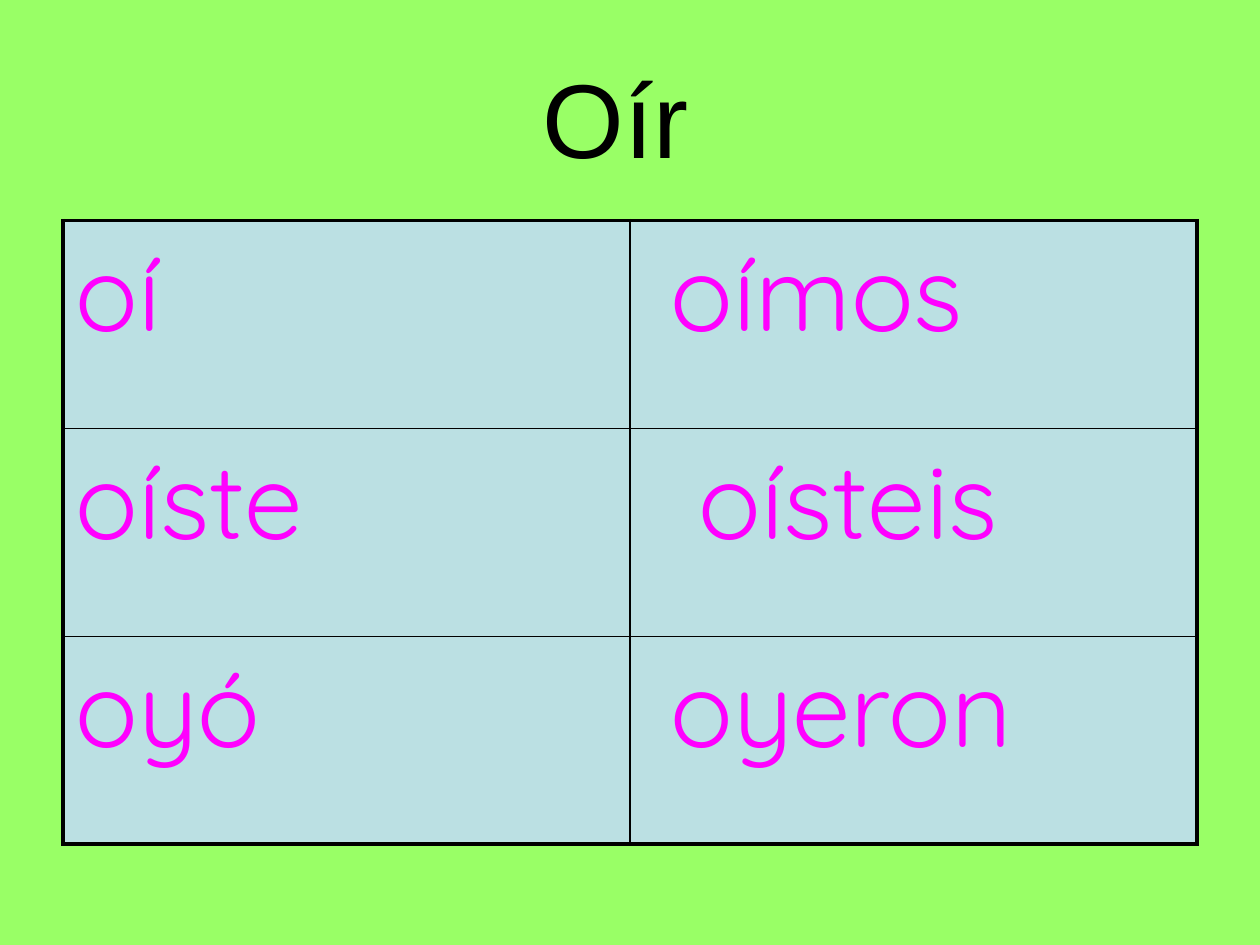
from lxml.etree import SubElement
from pptx import Presentation
from pptx.dml.color import RGBColor as Rgb
from pptx.enum.text import MSO_ANCHOR as Anchor, PP_ALIGN as Align
from pptx.oxml.ns import qn
from pptx.util import Pt

TITLE = "Oír"
# Each entry is a verb form and its indent in steps.
FORMS = [
    [("oí", 0), ("oímos", 1)],
    [("oíste", 0), ("oísteis", 2)],
    [("oyó", 0), ("oyeron", 1)],
]

THEME = {
    "background": "99FF66",
    "cell": "BBE0E3",
    "border": "000000",
    "title": {"name": "Arial", "size": Pt(60), "color": "000000"},
    "form": {"name": "Quicksand", "size": Pt(60), "color": "FF00FF"},
}
SLIDE_SIZE = (720, 540)
TITLE_BOX = (36, 21.6, 648, 90)
TABLE_BOX = (36, 126, 648, 356.4)
INSET, INDENT = 7.2, 16
OUTER, INNER = 2.25, 1


def write(para, text, style):
    span = para.add_run()
    span.text = text
    for name, value in style.items():
        if name == "color":
            span.font.color.rgb = Rgb.from_string(value)
        else:
            setattr(span.font, name, value)


def add_borders(cell, widths):
    """Border lines must come before the fill, so call this first."""
    properties = cell._tc.get_or_add_tcPr()
    for side, width in widths.items():
        line = SubElement(properties, qn(f"a:ln{side}"), w=str(Pt(width)))
        fill = SubElement(line, qn("a:solidFill"))
        SubElement(fill, qn("a:srgbClr"), val=THEME["border"])


def add_title(page):
    box = page.shapes.add_textbox(*map(Pt, TITLE_BOX))
    frame = box.text_frame
    layout = {"word_wrap": True, "vertical_anchor": Anchor.MIDDLE,
              "margin_right": Pt(INSET + INDENT)}
    for name, value in layout.items():
        setattr(frame, name, value)
    para = frame.paragraphs[0]
    para.alignment = Align.CENTER
    write(para, TITLE, THEME["title"])


def add_forms(page):
    rows, columns = len(FORMS), len(FORMS[0])
    table = page.shapes.add_table(rows, columns, *map(Pt, TABLE_BOX)).table
    table.first_row = table.horz_banding = False
    for r, forms in enumerate(FORMS):
        for c, (text, steps) in enumerate(forms):
            cell = table.cell(r, c)
            edges = {"L": c == 0, "R": c == columns - 1,
                     "T": r == 0, "B": r == rows - 1}
            add_borders(cell, {side: OUTER if outer else INNER
                               for side, outer in edges.items()})
            cell.fill.solid()
            cell.fill.fore_color.rgb = Rgb.from_string(THEME["cell"])
            cell.margin_left = Pt(INSET + steps * INDENT)
            write(cell.text_frame.paragraphs[0], text, THEME["form"])


def main():
    deck = Presentation()
    deck.slide_width, deck.slide_height = map(Pt, SLIDE_SIZE)
    page = deck.slides.add_slide(deck.slide_layouts[6])
    page.background.fill.solid()
    page.background.fill.fore_color.rgb = Rgb.from_string(THEME["background"])
    add_title(page)
    add_forms(page)
    deck.save("out.pptx")


if __name__ == "__main__":
    main()
